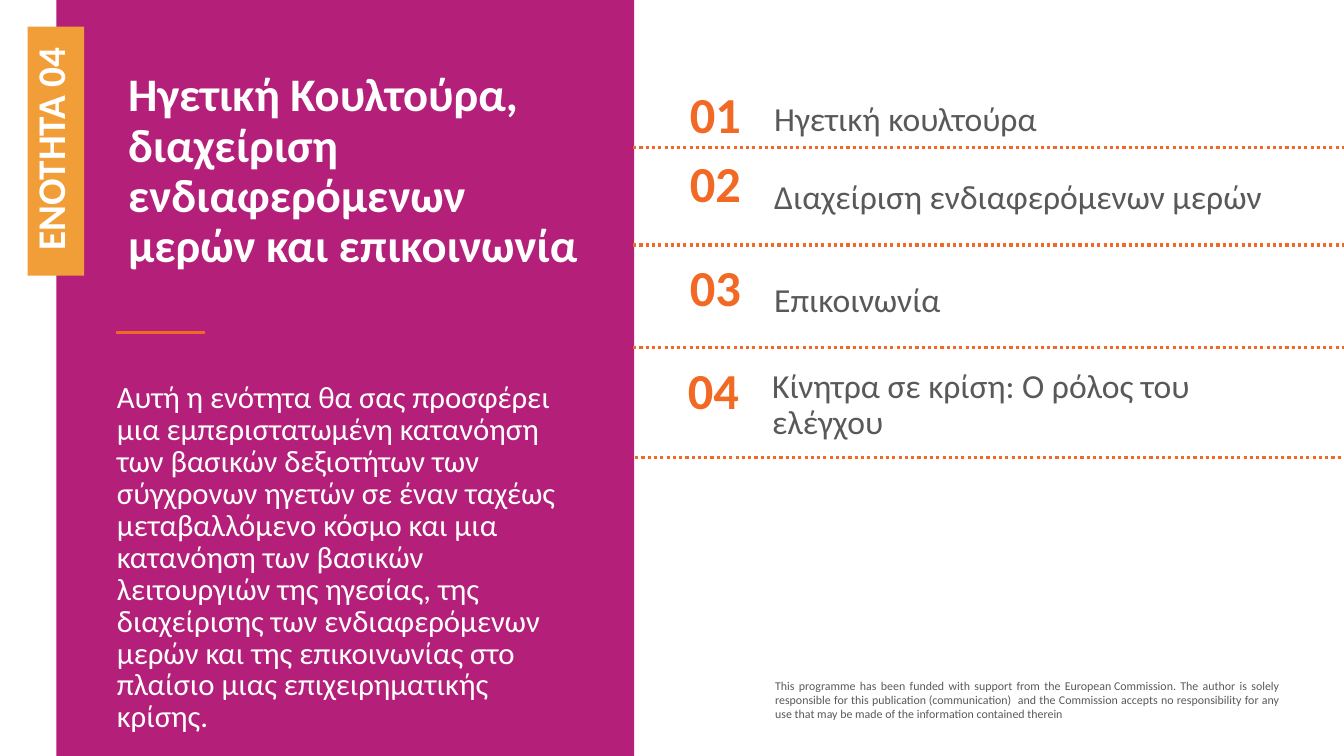
from pptx import Presentation
from pptx.dml.color import RGBColor
from pptx.enum import dml, shapes, text
from pptx.oxml.ns import qn
from pptx.util import Inches, Pt

WIDE, HIGH = 13.33, 7.5
FONT = "Calibri"
HUES = {"panel": "B41F7A", "tab": "F29E38", "accent": "F16924",
        "body": "595959", "white": "FFFFFF"}

UNIT = "ΕΝΟΤΗΤΑ 04"
TITLE = "Ηγετική Κουλτούρα, διαχείριση ενδιαφερόμενων μερών και επικοινωνία"
INTRO = ("Αυτή η ενότητα θα σας προσφέρει μια εμπεριστατωμένη κατανόηση των "
         "βασικών δεξιοτήτων των σύγχρονων ηγετών σε έναν ταχέως μεταβαλλόμενο "
         "κόσμο και μια κατανόηση των βασικών λειτουργιών της ηγεσίας, της "
         "διαχείρισης των ενδιαφερόμενων μερών και της επικοινωνίας στο πλαίσιο "
         "μιας επιχειρηματικής κρίσης.")
NOTE = ("This programme has been funded with support from the European\u00a0Commission. "
        "The author is solely responsible for this publication\u00a0(communication)  "
        "and the Commission accepts no responsibility for any use that may be made "
        "of the information contained therein")
# topic, middle of topic, middle of number, rule below, left shift
TOPICS = [
    ("Ηγετική κουλτούρα", 1.2, 1.16, 1.46, 0),
    ("Διαχείριση ενδιαφερόμενων μερών", 1.97, 1.85, 2.43, 0),
    ("Επικοινωνία", 2.99, 2.88, 3.45, 0),
    ("Κίνητρα σε κρίση: Ο ρόλος του ελέγχου", 4.02, 3.9, 4.54, 0.02),
]
PANEL_X, PANEL_W = 0.56, 5.73
EDGE = 6.28
NUM_X, NUM_W = 6.64, 0.91
TOPIC_X, TOPIC_W = 7.58, 5.2
ROW_H = 0.69


def hue(name):
    return RGBColor.from_string(HUES[name])


def write(shape, words, size, color, bold=False, space=0.9,
          align=text.PP_ALIGN.LEFT, anchor=text.MSO_ANCHOR.MIDDLE):
    frame = shape.text_frame
    frame.text = words
    frame.word_wrap = True
    frame.auto_size = text.MSO_AUTO_SIZE.NONE
    frame.vertical_anchor = anchor
    para = frame.paragraphs[0]
    para.alignment = align
    para.line_spacing = space
    para.space_before = Pt(0)
    font = para.runs[0].font
    font.name, font.size, font.bold = FONT, Pt(size), bold
    font.color.rgb = hue(color)
    return para


def place(shape, *box):
    shape.left, shape.top, shape.width, shape.height = map(Inches, box)


def label(slide, box, *args, **kw):
    return write(slide.shapes.add_textbox(*map(Inches, box)), *args, **kw)


def block(slide, box, color):
    rect = slide.shapes.add_shape(shapes.MSO_SHAPE.RECTANGLE, *map(Inches, box))
    rect.shadow.inherit = False
    rect.fill.solid()
    rect.fill.fore_color.rgb = hue(color)
    rect.line.fill.background()
    return rect


def rule(slide, left, y):
    line = slide.shapes.add_connector(
        shapes.MSO_CONNECTOR.STRAIGHT,
        *map(Inches, (left, y, left + WIDE - EDGE, y)))
    line.line.color.rgb = hue("accent")
    line.line.width = Pt(2.25)
    line.line.dash_style = dml.MSO_LINE.ROUND_DOT
    props = line._element.spPr
    props.append(props.makeelement(qn("a:effectLst"), {}))


def main():
    deck = Presentation()
    deck.slide_width, deck.slide_height = Inches(WIDE), Inches(HIGH)
    slide = deck.slides.add_slide(deck.slide_layouts[1])
    title, intro = slide.placeholders

    panel = block(slide, (PANEL_X, 0, PANEL_W, HIGH), "panel")
    title._element.addprevious(panel._element)

    top = text.MSO_ANCHOR.TOP
    place(title, 1.17, 0.66, 4.92, 2.47)
    write(title, TITLE, 33.3, "white", bold=True, anchor=top)
    place(intro, 1.06, 3.75, 4.8, 2.71)
    para = write(intro, INTRO, 22, "white", space=Pt(22.8), anchor=top)
    props = para._p.get_or_add_pPr()
    props.set("marL", "0")
    props.set("indent", "0")
    props.append(props.makeelement(qn("a:buNone"), {}))

    dash = block(slide, (1.16, 3.29, 0.87, 0.02), "accent")
    dash.line.color.rgb = hue("accent")
    dash.line.width = Pt(1)

    tab = block(slide, (-0.68, 1.22, 2.47, 0.56), "tab")
    tab.rotation = 270
    para = write(tab, UNIT, 28, "white", bold=True, space=Pt(24.4))
    para._p.get_or_add_pPr().set("marL", str(Inches(0.15)))

    for i, (topic, mid, num, low, shift) in enumerate(TOPICS, 1):
        label(slide, (NUM_X - shift, num - ROW_H / 2, NUM_W, ROW_H),
              f"{i:02}", 36, "accent", bold=True, align=text.PP_ALIGN.CENTER)
        label(slide, (TOPIC_X - shift, mid - ROW_H / 2, TOPIC_W, ROW_H),
              topic, 24, "body")
        rule(slide, EDGE + shift, low)

    label(slide, (7.59, 6.68, TOPIC_W, 0.53), NOTE, 8.5, "body", space=1.0,
          align=text.PP_ALIGN.JUSTIFY, anchor=top)
    deck.save("out.pptx")


if __name__ == "__main__":
    main()
